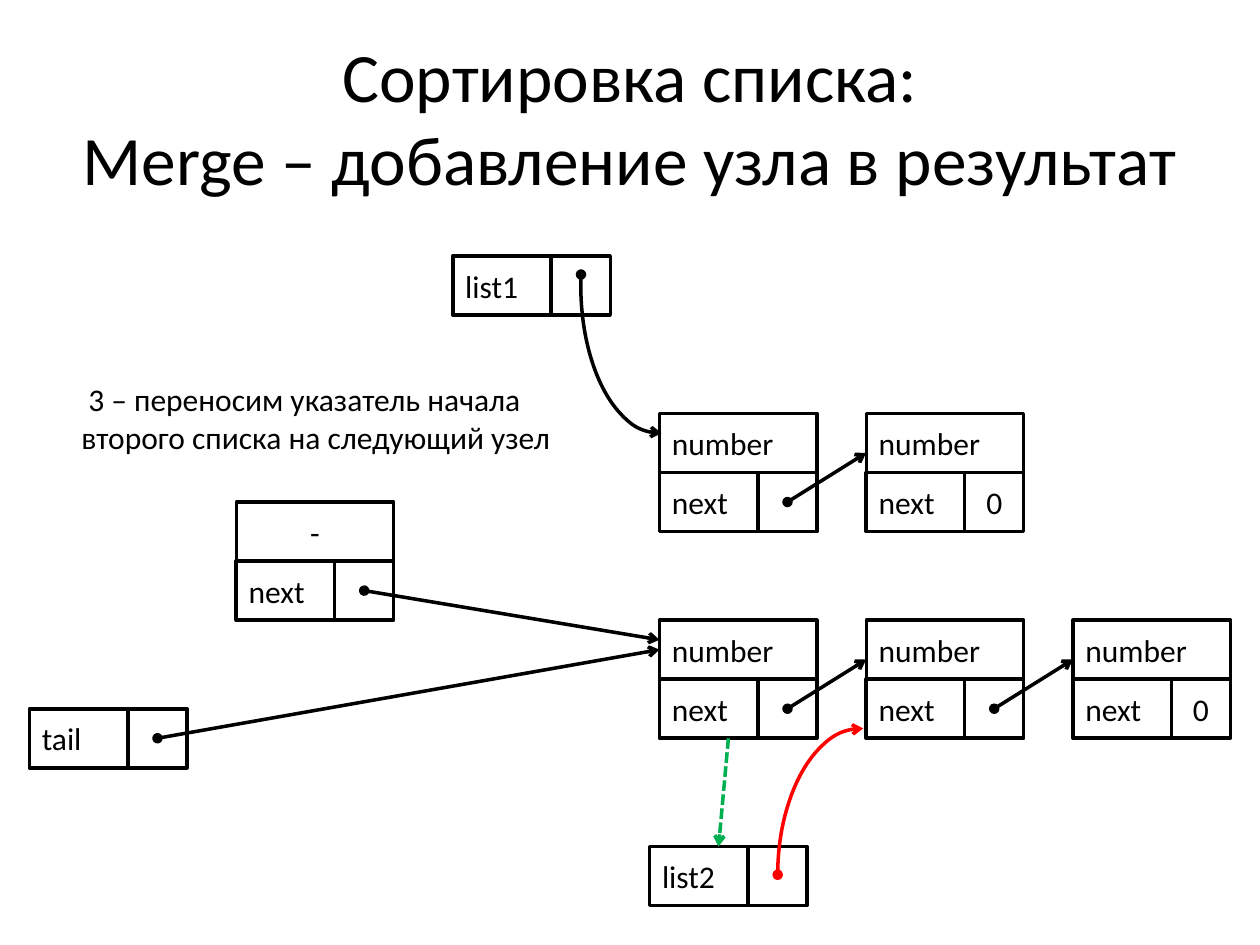
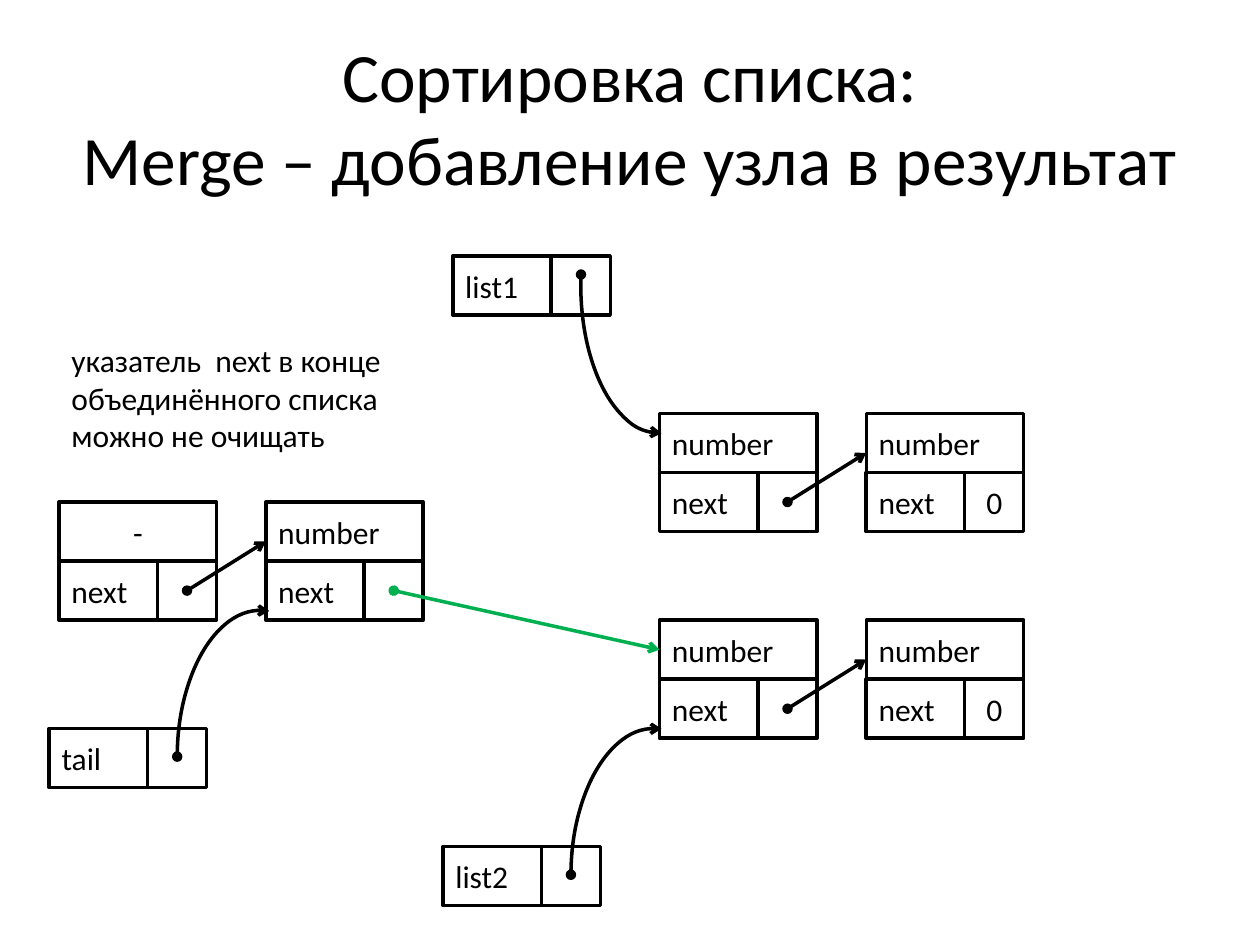
from dataclasses import dataclass
from lxml.etree import SubElement
from pptx import Presentation
from pptx.dml.color import RGBColor
from pptx.enum.dml import MSO_LINE
from pptx.enum.shapes import MSO_CONNECTOR as LINK, MSO_SHAPE as SHAPE
from pptx.enum.text import MSO_ANCHOR as ANCHOR, MSO_AUTO_SIZE as FIT, PP_ALIGN as ALIGN
from pptx.oxml.ns import qn
from pptx.util import Pt

EMU_PER_PX = 7143.75


@dataclass(frozen=True)
class Theme:
    ink: RGBColor = RGBColor(0, 0, 0)
    moved: RGBColor = RGBColor(255, 0, 0)
    changed: RGBColor = RGBColor(0, 176, 80)
    font: str = "Calibri"
    title: float = 39.6
    body: float = 18
    stroke: float = 2


THEME = Theme()
ROW = 60
LABEL_WIDTH = 100
NODE_WIDTH = LABEL_WIDTH + ROW
PITCH = 210
POINTER_X = LABEL_WIDTH + ROW // 2
MIDDLE = ROW // 2
ARC_HEIGHT = 300

TITLE = "Сортировка списка:\vMerge – добавление узла в результат"


def px(*lengths):
    return [round(length * EMU_PER_PX) for length in lengths]


def apply(target, **values):
    for key, value in values.items():
        setattr(target, key, value)


def write(frame, text, size, align=ALIGN.LEFT, before=0):
    frame.text = text
    for paragraph in frame.paragraphs:
        apply(paragraph, alignment=align, space_before=Pt(before))
        for run in paragraph.runs:
            apply(run.font, name=THEME.font, size=Pt(size))
            run.font.color.rgb = THEME.ink


def stroke(line, color, start=None, end=None, dash=None):
    line.color.rgb = color
    line.width = Pt(THEME.stroke)
    if dash:
        line.dash_style = dash
    for tag, tip in (("a:headEnd", start), ("a:tailEnd", end)):
        if tip:
            SubElement(line._get_or_add_ln(), qn(tag), type=tip)


def outline(slide, kind, box, color=THEME.ink, **tips):
    shape = slide.shapes.add_shape(kind, *px(*box))
    shape.shadow.inherit = False
    shape.fill.background()
    stroke(shape.line, color, **tips)
    return shape


def cell(slide, left, top, width, text="", align=ALIGN.LEFT):
    shape = outline(slide, SHAPE.RECTANGLE, (left, top, width, ROW))
    shape.text_frame.vertical_anchor = ANCHOR.MIDDLE
    write(shape.text_frame, text, THEME.body, align, before=6)
    return shape


def arrow(slide, start, end, color=THEME.ink, tip="oval", dash=None, target=None):
    link = slide.shapes.add_connector(LINK.STRAIGHT, *px(*start, *end))
    stroke(link.line, color, start=tip, end="arrow", dash=dash)
    SubElement(link._element.spPr, qn("a:effectLst"))
    if target is not None:
        link.end_connect(target, 1)


def labelled_pointer(slide, left, top, label, value=""):
    cell(slide, left, top, LABEL_WIDTH, label)
    cell(slide, left + LABEL_WIDTH, top, ROW, value, ALIGN.CENTER)
    return left + POINTER_X, top + MIDDLE


def chain(slide, left, top, values, end="0"):
    heads = []
    for i, value in enumerate(values):
        x = left + i * PITCH
        last = i == len(values) - 1
        align = ALIGN.CENTER if value == "-" else ALIGN.LEFT
        heads.append(cell(slide, x, top, NODE_WIDTH, value, align))
        pointer = labelled_pointer(slide, x, top + ROW, "next", end if last else "")
        if not last:
            arrow(slide, pointer, (x + PITCH, top + 40))
    return heads[0], pointer


def arc(slide, pointer, width, angles, color=THEME.ink, **tips):
    x, y = pointer
    box = (x, y - ARC_HEIGHT // 2, width, ARC_HEIGHT)
    curve = outline(slide, SHAPE.ARC, box, color, **tips)
    for i, angle in enumerate(angles):
        curve.adjustments[i] = angle


def arc_down(slide, pointer):
    arc(slide, pointer, 160, (53.53, 112.75), start="arrow", end="oval")


def arc_up(slide, pointer, sweep_end, color=THEME.ink):
    arc(slide, pointer, 170, (108.52, sweep_end), color, start="oval", end="arrow")


def title(slide, box):
    heading = slide.shapes.add_textbox(*px(*box)).text_frame
    apply(heading, word_wrap=True, vertical_anchor=ANCHOR.MIDDLE)
    write(heading, TITLE, THEME.title, ALIGN.CENTER)


def note(slide, box, text):
    frame = slide.shapes.add_textbox(*px(*box)).text_frame
    apply(frame, word_wrap=False, auto_size=FIT.SHAPE_TO_FIT_TEXT)
    write(frame, text, THEME.body)


def merge_slide(deck):
    slide = deck.slides.add_slide(deck.slide_layouts[6])
    title(slide, (64, 38, 1152, 160))
    chain(slide, 670, 420, ["number"] * 2)
    arc_down(slide, labelled_pointer(slide, 460, 260, "list1"))
    return slide


def advance_list2(deck):
    slide = merge_slide(deck)
    second, _ = chain(slide, 670, 630, ["number"] * 3)
    list2 = labelled_pointer(slide, 660, 860, "list2")
    arc_up(slide, list2, 162.44, THEME.moved)
    _, result = chain(slide, 240, 510, ["-"], end="")
    arrow(slide, result, (670, 650))
    tail = labelled_pointer(slide, 30, 720, "tail")
    arrow(slide, tail, (670, 660), target=second)
    arrow(slide, (740, 750), (730, 860), THEME.changed, None, MSO_LINE.SQUARE_DOT)
    note(slide, (70, 380, 508, 91),
         " 3 – переносим указатель начала\vвторого списка на следующий узел")


def keep_next(deck):
    slide = merge_slide(deck)
    second, _ = chain(slide, 670, 630, ["number"] * 2)
    arc_up(slide, labelled_pointer(slide, 450, 860, "list2"), 163.63)
    _, result_end = chain(slide, 60, 510, ["-", "number"], end="")
    arrow(slide, result_end, (670, 660), THEME.changed, target=second)
    arc_up(slide, labelled_pointer(slide, 50, 740, "tail"), 163.96)
    note(slide, (60, 340, 344, 129),
         "указатель  next в конце\nобъединённого списка\nможно не очищать")


def main():
    deck = Presentation()
    deck.slide_width, deck.slide_height = px(1280, 960)
    advance_list2(deck)
    keep_next(deck)
    deck.save("out.pptx")


if __name__ == "__main__":
    main()
